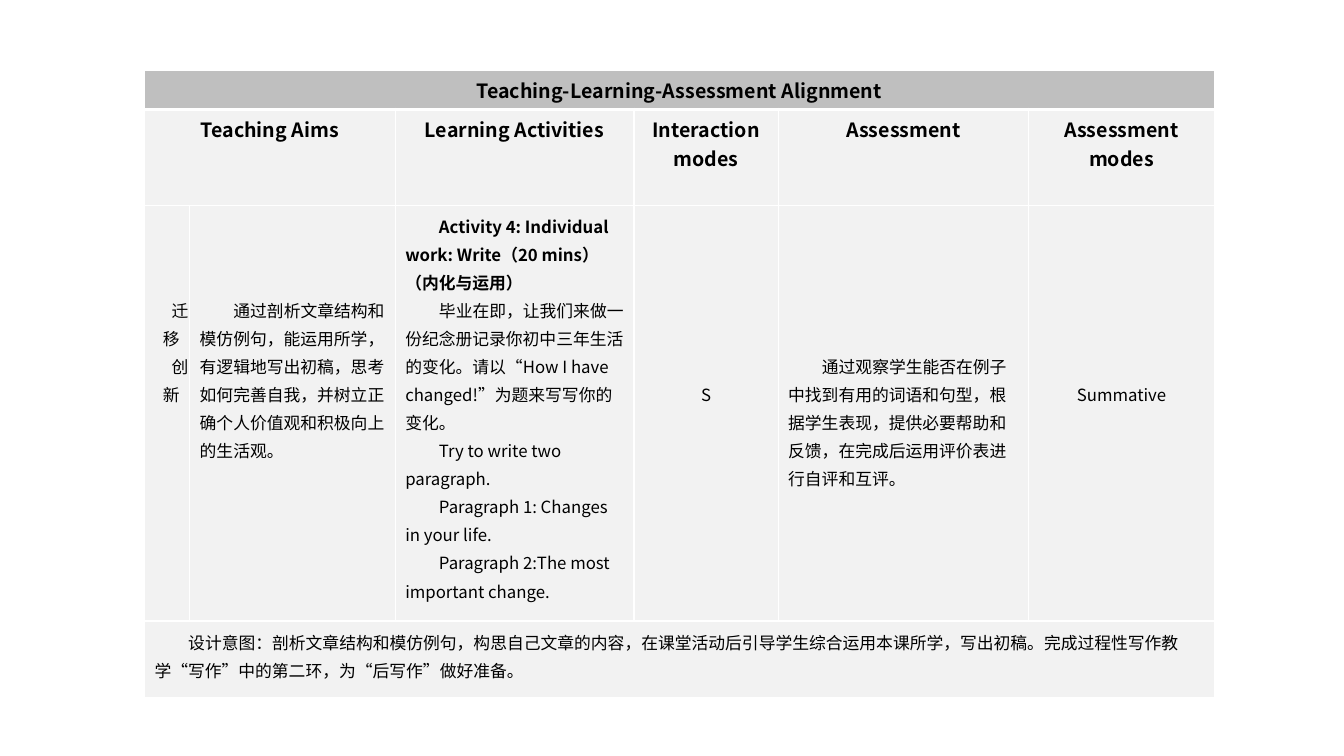
from dataclasses import dataclass

from lxml.etree import SubElement
from pptx import Presentation
from pptx.dml.color import RGBColor
from pptx.enum.text import MSO_ANCHOR, PP_ALIGN as Align
from pptx.oxml.ns import qn
from pptx.table import Table, _Cell as Cell
from pptx.util import Cm, Pt

BLACK = RGBColor(0x00, 0x00, 0x00)
WHITE = RGBColor(0xFF, 0xFF, 0xFF)
TITLE_GREY = RGBColor(0xBF, 0xBF, 0xBF)
BODY_GREY = RGBColor(0xF2, 0xF2, 0xF2)

TYPEFACE = "Noto Sans CJK SC"
LINE_PITCH = Pt(20)
CELL_PADDING = Cm(0.13)
FIRST_LINE_INDENT = Cm(0.85)
COLUMN_WIDTHS = (1.14, 5.18, 6.02, 3.63, 6.32, 4.67)
ROW_HEIGHTS = (0.96, 2.42, 10.47, 1.92)

HEADING = {"size": Pt(14), "bold": True}
BODY = {"size": Pt(12), "bold": False}
STRONG_BODY = {"size": Pt(12), "bold": True}


@dataclass(frozen=True)
class Entry:
    row: int
    column: int
    lines: tuple[str, ...]
    span: int = 1
    align: Align = Align.LEFT
    lines_above: int = 0
    strong_lines: int = 0


HEADINGS = (
    Entry(0, 0, ("Teaching-Learning-Assessment Alignment",), span=6),
    Entry(1, 0, ("Teaching Aims",), span=2),
    Entry(1, 2, ("Learning Activities",)),
    Entry(1, 3, ("Interaction modes",)),
    Entry(1, 4, ("Assessment",)),
    Entry(1, 5, ("Assessment modes",)),
)

LESSON = (
    Entry(2, 0, ("迁移", "创新"), align=Align.RIGHT, lines_above=3),
    Entry(2, 1, (
        "通过剖析文章结构和模仿例句，能运用所学，有逻辑地写出初稿，思考如何完善自我，"
        "并树立正确个人价值观和积极向上的生活观。",
    ), lines_above=3),
    Entry(2, 2, (
        "Activity 4: Individual work: Write（20 mins）（内化与运用）",
        "毕业在即，让我们来做一份纪念册记录你初中三年生活的变化。"
        "请以“How I have changed!”为题来写写你的变化。",
        "Try to write two paragraph.",
        "Paragraph 1: Changes in your life.",
        "Paragraph 2:The most important change.",
    ), strong_lines=1),
    Entry(2, 3, ("S",), align=Align.CENTER, lines_above=6),
    Entry(2, 4, (
        "通过观察学生能否在例子中找到有用的词语和句型，根据学生表现，提供必要帮助和反馈，"
        "在完成后运用评价表进行自评和互评。",
    ), lines_above=5),
    Entry(2, 5, ("Summative",), align=Align.CENTER, lines_above=6),
    Entry(3, 0, (
        "设计意图：剖析文章结构和模仿例句，构思自己文章的内容，在课堂活动后引导学生综合运用本课所学，"
        "写出初稿。完成过程性写作教学“写作”中的第二环，为“后写作”做好准备。",
    ), span=6),
)


def style_cell(cell: Cell, row: int) -> None:
    properties = cell._tc.get_or_add_tcPr()
    heavy_side = {0: "lnB", 1: "lnT"}.get(row)
    for side in ("lnL", "lnR", "lnT", "lnB"):
        width = Pt(3) if side == heavy_side else Pt(1)
        border = SubElement(properties, qn(f"a:{side}"), w=str(width))
        paint = SubElement(border, qn("a:solidFill"))
        SubElement(paint, qn("a:srgbClr"), val=str(WHITE))
    cell.fill.solid()
    cell.fill.fore_color.rgb = BODY_GREY if row else TITLE_GREY
    cell.text_frame.paragraphs[0].font.size = Pt(12)


def write_entry(table: Table, entry: Entry, is_heading: bool) -> None:
    cell = table.cell(entry.row, entry.column)
    if entry.span > 1:
        cell.merge(table.cell(entry.row, entry.column + entry.span - 1))
    cell.vertical_anchor = MSO_ANCHOR.TOP
    cell.margin_top = CELL_PADDING + entry.lines_above * LINE_PITCH
    for index, line in enumerate(entry.lines):
        frame = cell.text_frame
        paragraph = frame.add_paragraph() if index else frame.paragraphs[0]
        paragraph.alignment = Align.CENTER if is_heading else entry.align
        if not is_heading:
            paragraph.line_spacing = LINE_PITCH
            if entry.align != Align.CENTER:
                paragraph._p.get_or_add_pPr().set("indent", str(FIRST_LINE_INDENT))
        run = paragraph.add_run()
        run.text = line
        body_format = STRONG_BODY if index < entry.strong_lines else BODY
        text_format = HEADING if is_heading else body_format
        for attribute, value in {**text_format, "name": TYPEFACE}.items():
            setattr(run.font, attribute, value)
        run.font.color.rgb = BLACK
        SubElement(run.font._element, qn("a:ea"), typeface=TYPEFACE)


def main() -> None:
    deck = Presentation()
    deck.slide_width, deck.slide_height = Cm(33.87), Cm(19.05)
    slide = deck.slides.add_slide(deck.slide_layouts[6])
    alignment_table = slide.shapes.add_table(
        len(ROW_HEIGHTS), len(COLUMN_WIDTHS), Cm(3.64), Cm(1.78),
        Cm(sum(COLUMN_WIDTHS)), Cm(sum(ROW_HEIGHTS)),
    ).table
    alignment_table.horz_banding = False
    alignment_table.first_row = False
    for column, width in zip(alignment_table.columns, COLUMN_WIDTHS):
        column.width = Cm(width)
    for index, height in enumerate(ROW_HEIGHTS):
        alignment_table.rows[index].height = Cm(height)
        for cell in alignment_table.rows[index].cells:
            style_cell(cell, index)
    for entry in HEADINGS:
        write_entry(alignment_table, entry, is_heading=True)
    for entry in LESSON:
        write_entry(alignment_table, entry, is_heading=False)
    deck.save("out.pptx")


if __name__ == "__main__":
    main()
